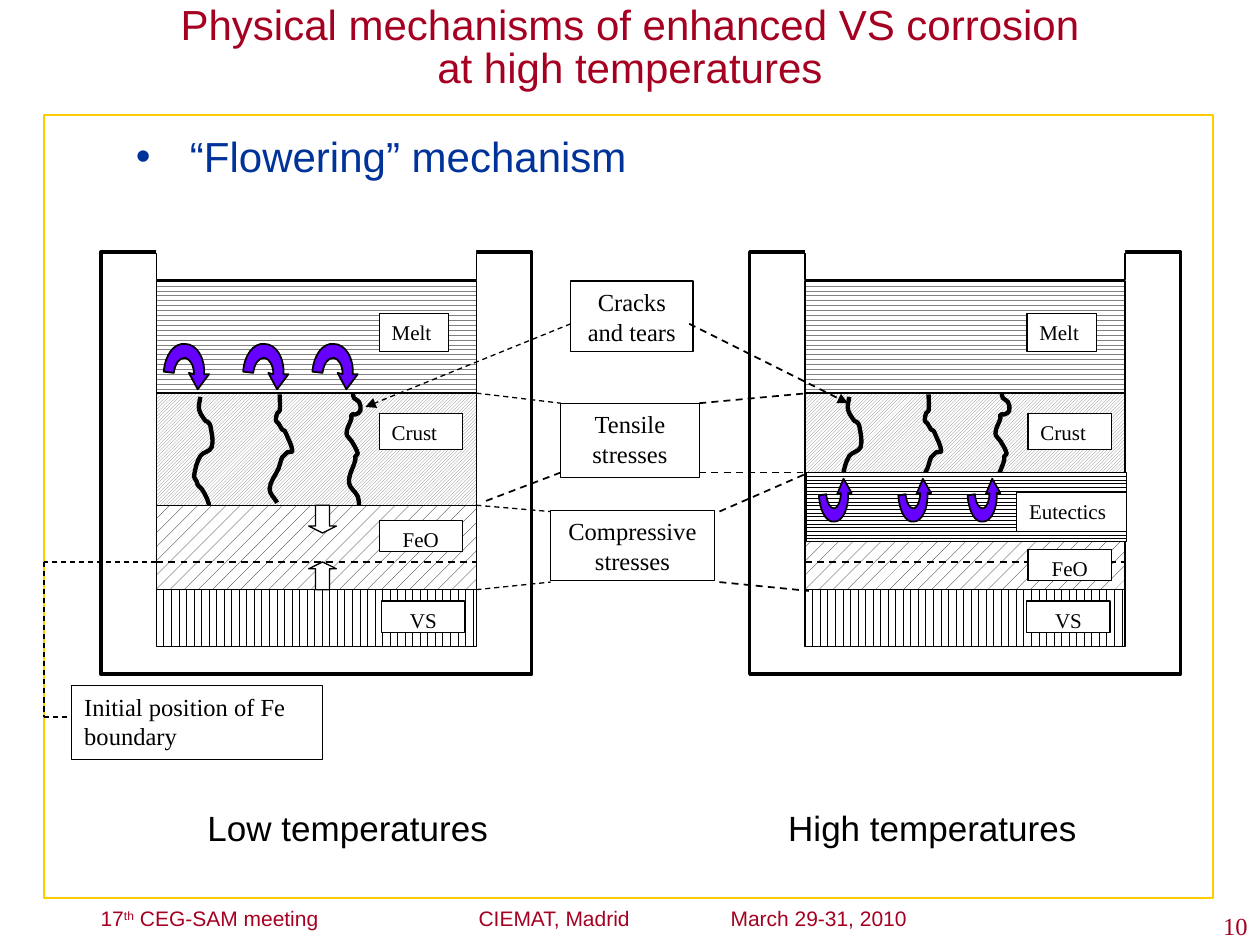
import math

from lxml import etree
from pptx import Presentation
from pptx import util as u
from pptx.dml.color import RGBColor
from pptx.enum import dml, shapes, text
from pptx.oxml import ns

SCALE = 9144
SERIF, SANS = "Times New Roman", "Arial"
RED, BLUE, BLACK, GREY, WHITE = "A50021", "003399", "000000", "808080", "FFFFFF"
LEFT, MID, RIGHT = text.PP_ALIGN.LEFT, text.PP_ALIGN.CENTER, text.PP_ALIGN.RIGHT
RECT = shapes.MSO_SHAPE.RECTANGLE
PAT = dml.MSO_PATTERN
CRACKS = [
    [(86, 201), (84, 195), (80, 188), (77, 185), (76, 182), (74, 178), (79, 162),
     (88, 155), (87, 138), (85, 135), (83, 134), (78, 125), (79, 115)],
    [(140, 199), (134, 188), (141, 172), (144, 163), (146, 161), (148, 159), (152, 158),
     (147, 144), (146, 142), (144, 141), (141, 136), (139, 134), (140, 128), (142, 126),
     (142, 113)],
    [(205, 201), (204, 194), (197, 183), (202, 165), (202, 162), (204, 160), (199, 150),
     (195, 144), (199, 132), (199, 129), (202, 129), (206, 126), (205, 119), (201, 116),
     (200, 112)],
]
HOOK = [
    [(24, 17), (21, 12), (17, 11)], [(12, 11), (9, 16), (8, 23)], [(0, 22)],
    [(1, 9), (8, -1), (17, 0)], [(26, 0), (33, 11), (32, 24)],
    [(36, 24)], [(27, 36)], [(20, 23)],
]


def px(n):
    return u.Emu(round(n * SCALE))


def color(code):
    return RGBColor.from_string(code)


def edge(line, code, width):
    line.color.rgb = color(code)
    line.width = u.Pt(width)


def paint(shape, fill, line, width):
    shape.shadow.inherit = False
    if fill:
        shape.fill.solid()
        shape.fill.fore_color.rgb = color(fill)
    else:
        shape.fill.background()
    if line:
        edge(shape.line, line, width)
    else:
        shape.line.fill.background()


def style(run, size, font, code):
    run.font.size = u.Pt(size)
    run.font.name = font
    run.font.color.rgb = color(code)


def write(frame, words, size, font, code, align=LEFT):
    frame.word_wrap = True
    frame.vertical_anchor = text.MSO_ANCHOR.TOP
    frame.text = words
    para = frame.paragraphs[0]
    para.alignment = align
    for run in para.runs:
        style(run, size, font, code)
    return para


def note(slide, box, words, size, code, align=LEFT, font=SANS):
    shape = slide.shapes.add_textbox(*map(px, box))
    return write(shape.text_frame, words, size, font, code, align)


def block(slide, box, fill=WHITE, line=BLACK, width=0.75, kind=RECT):
    shape = slide.shapes.add_shape(kind, *map(px, box))
    paint(shape, fill, line, width)
    return shape


def layer(slide, box, kind, ink):
    fill = block(slide, box).fill
    fill.patterned()
    fill.pattern = kind
    fill.fore_color.rgb = color(ink)
    fill.back_color.rgb = color(WHITE)


def label(slide, box, words, size=12, align=LEFT):
    write(block(slide, box).text_frame, words, size, SERIF, BLACK, align)


def dash(slide, start, end, width=0.75, head=False):
    line = slide.shapes.add_connector(
        shapes.MSO_CONNECTOR.STRAIGHT, *map(px, (*start, *end)))
    edge(line.line, BLACK, width)
    line.line.dash_style = dml.MSO_LINE.DASH
    if head:
        ln = line._element.spPr.find(ns.qn("a:ln"))
        etree.SubElement(ln, ns.qn("a:tailEnd"), type="triangle")
    etree.SubElement(line._element.spPr, ns.qn("a:effectLst"))


def outline(slide, start, parts, fill, width, close):
    pen = slide.shapes.build_freeform(*map(px, start), scale=1.0)
    pen.add_line_segments([(px(x), px(y)) for part in parts for x, y in part], close=close)
    shape = pen.convert_to_shape()
    steps = iter(list(shape._element.iter(ns.qn("a:lnTo"))))
    for part in parts:
        first, *rest = [next(steps) for _ in part]
        if rest:
            first.tag = ns.qn("a:cubicBezTo")
            for step in rest:
                first.append(step[0])
                step.getparent().remove(step)
    paint(shape, fill, BLACK, width)


def curves(points):
    ends = [points[0], *points, points[-1]]
    parts = []
    for a, b, c, d in zip(ends, ends[1:], ends[2:], ends[3:]):
        reach = math.dist(b, c) / 3
        s, t = reach / math.dist(a, c), reach / math.dist(b, d)
        parts.append([(b[0] + s * (c[0] - a[0]), b[1] + s * (c[1] - a[1])),
                      (c[0] - t * (d[0] - b[0]), c[1] - t * (d[1] - b[1])), c])
    return parts


def hook(slide, x, y, width, height):
    def spot(point):
        return x + point[0] * width / 36, y + point[1] * height / 36

    parts = [[spot(point) for point in part] for part in HOOK]
    outline(slide, spot((24, 24)), parts, "6600FF", 1, True)


def vessel(slide, x, y, feo, edges):
    for top, height, kind, ink in [
            (268, 45, PAT.DASHED_VERTICAL, BLACK), (201, 67, PAT.PERCENT_10, BLACK),
            (112, 89, PAT.LIGHT_UPWARD_DIAGONAL, GREY), (23, 89, PAT.WAVE, GREY)]:
        layer(slide, (x + 44, y + top, 254, height), kind, ink)
    block(slide, (x, y, 342, 335), None, BLACK, 2)
    block(slide, (x + 44, y, 254, 22))
    block(slide, (x + 44, y - 21, 254, 22), WHITE, None)
    dash(slide, (x + 44, 446), (x + 298, 446), 1)
    for crack in CRACKS:
        points = [(x + a, y + b) for a, b in crack]
        outline(slide, points[0], curves(points), None, 2.5, False)
    melt, base = edges
    label(slide, (x + melt, y + 49, 55, 30), "Melt")
    label(slide, (x + 221, y + 128, 66, 29), "Crust")
    label(slide, (x + 221, y + feo, 66, 25), "FeO", align=MID)
    label(slide, (x + base, y + 277, 66, 25), "VS", align=MID)


def low(slide, x, y):
    vessel(slide, x, y, 213, (221, 223))
    arrows = [(201, shapes.MSO_SHAPE.DOWN_ARROW), (246, shapes.MSO_SHAPE.UP_ARROW)]
    for top, kind in arrows:
        block(slide, (x + 165, y + top, 22, 22), kind=kind).adjustments[1] = 0.25
    for left in (50, 113, 168):
        hook(slide, x + left, y + 73, 36, 36)
    corners = [(x + 44, 446), (35, 446), (35, 569), (57, 569)]
    for start, end in zip(corners, corners[1:]):
        dash(slide, start, end)
    label(slide, (57, 544, 199, 59), "Initial position of Fe boundary", 14)


def high(slide, x, y):
    vessel(slide, x, y, 236, (220, 220))
    layer(slide, (x + 45, y + 175, 254, 55), PAT.ZIG_ZAG, BLACK)
    label(slide, (x + 212, y + 191, 87, 31), "Eutectics")
    for left in (55, 118, 173):
        hook(slide, x + left, y + 214, 26, -34)


def calls(slide):
    for start, end, width in [
            ((378, 468), (437, 462), 0.75), ((378, 401), (437, 406), 0.75),
            ((378, 312), (445, 320), 0.75), ((571, 462), (642, 469), 1),
            ((571, 406), (642, 375), 1), ((555, 375), (642, 375), 1),
            ((555, 320), (642, 312), 1), ((445, 375), (382, 399), 1)]:
        dash(slide, start, end, width)
    dash(slide, (453, 257), (290, 323), head=True)
    label(slide, (453, 223, 97, 56), "Cracks and tears", 14, MID)
    label(slide, (445, 320, 110, 59), "Tensile stresses", 14, MID)
    label(slide, (437, 405, 130, 56), "Compressive stresses", 14, MID)
    dash(slide, (547, 257), (673, 320), 1, True)


def frame(slide):
    block(slide, (35, 91, 928, 622), WHITE, "FFCC00", 1)
    title = note(slide, (130, 0, 740, 91),
                 "Physical mechanisms of enhanced VS corrosion at high temperatures",
                 24, RED, MID)
    title.line_spacing = 0.85
    item = note(slide, (98, 99, 780, 50), "“Flowering” mechanism", 24, BLUE)
    props = item._p.get_or_add_pPr()
    props.set("marL", str(px(43)))
    props.set("indent", str(px(-43)))
    etree.SubElement(props, ns.qn("a:buFont"), typeface=SANS)
    etree.SubElement(props, ns.qn("a:buChar"), char="•")
    for x, words in [(75, "Low temperatures"), (539, "High temperatures")]:
        note(slide, (x, 635, 402, 43), words, 20, BLACK, MID)


def foot(slide):
    para = note(slide, (70, 714, 705, 32), "17", 12, RED)
    tabs = etree.SubElement(para._p.get_or_add_pPr(), ns.qn("a:tabLst"))
    for stop in (300, 500):
        etree.SubElement(tabs, ns.qn("a:tab"), pos=str(px(stop)), algn="l")
    for words in ("th", " CEG-SAM meeting\tCIEMAT, Madrid\tMarch 29-31, 2010"):
        run = para.add_run()
        run.text = words
        style(run, 12, SANS, RED)
    para.runs[1].font._element.set("baseline", "30000")
    note(slide, (792, 718, 208, 32), "10", 14, RED, RIGHT, SERIF)


def main():
    deck = Presentation()
    deck.slide_width, deck.slide_height = px(1000), px(750)
    slide = deck.slides.add_slide(deck.slide_layouts[6])
    frame(slide)
    low(slide, 80, 200)
    high(slide, 595, 200)
    calls(slide)
    foot(slide)
    deck.save("out.pptx")


if __name__ == "__main__":
    main()
